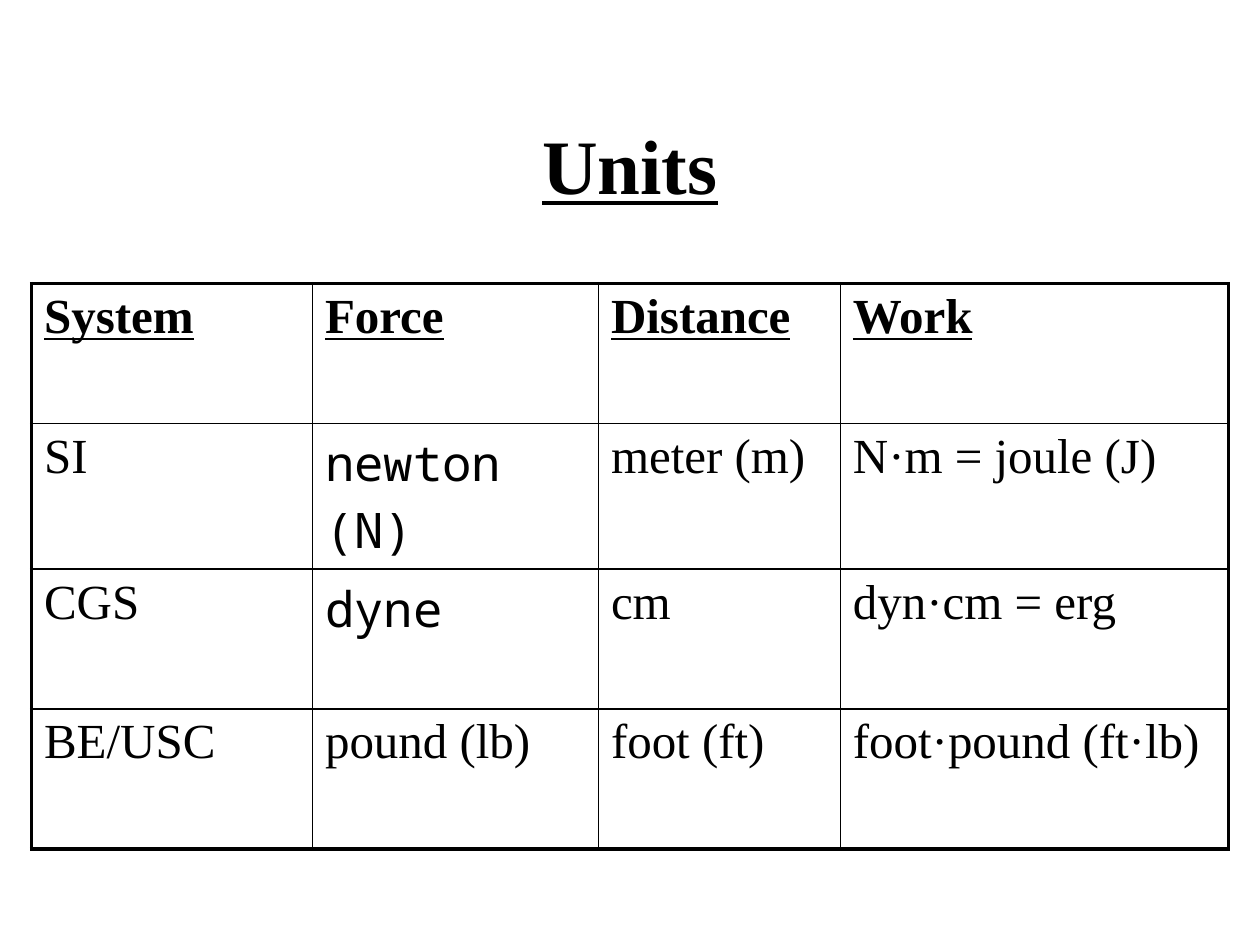
"""Build a slide with a table of units of force, distance and work."""
import pptx
import pptx.util
import pptx.dml.color
import pptx.enum.text
import pptx.oxml
import pptx.oxml.ns

WIDE, HIGH = 10, 7.5
INK = {"text": "000000", "line": "000000"}
SERIF, MONO = "Times New Roman", "Noto Sans Mono"
COLS = [2.23, 2.27, 1.92, 3.08]
ROW = 1.11
ROWS = [
    ["System", "Force", "Distance", "Work"],
    ["SI", "newton (N)", "meter (m)", "N·m = joule (J)"],
    ["CGS", "dyne", "cm", "dyn·cm = erg"],
    ["BE/USC", "pound (lb)", "foot (ft)", "foot·pound (ft·lb)"],
]
MONO_TEXT = {"newton (N)", "dyne"}


def inch(size):
    """Turn inches into a length."""
    return pptx.util.Inches(size)


def put(frame, text, size=28, font=SERIF, strong=False, align=None):
    """Write one formatted paragraph and return it."""
    para = frame.paragraphs[0]
    para.alignment = align
    run = para.add_run()
    run.text = text
    run.font.size = pptx.util.Pt(size)
    run.font.name = font
    run.font.bold = run.font.underline = strong
    run.font.color.rgb = pptx.dml.color.RGBColor.from_string(INK["text"])
    return para


def space(para, share):
    """Set the space before a paragraph as a share of its line."""
    tag = pptx.oxml.ns.nsdecls("a")
    xml = f'<a:spcBef {tag}><a:spcPct val="{int(share * 100000)}"/></a:spcBef>'
    para._p.get_or_add_pPr().insert(0, pptx.oxml.parse_xml(xml))


def edge(cell, side, width):
    """Draw one border of a cell."""
    tag = pptx.oxml.ns.nsdecls("a")
    xml = (f'<a:ln{side} {tag} w="{pptx.util.Pt(width)}"><a:solidFill>'
           f'<a:srgbClr val="{INK["line"]}"/></a:solidFill></a:ln{side}>')
    cell._tc.get_or_add_tcPr().append(pptx.oxml.parse_xml(xml))


def head(slide):
    """Place and format the title."""
    title = slide.shapes.title
    title.left, title.top = inch(0.075 * WIDE), inch(0.09 * HIGH)
    title.width, title.height = inch(0.85 * WIDE), inch(HIGH / 6)
    title.text_frame.vertical_anchor = pptx.enum.text.MSO_ANCHOR.MIDDLE
    put(title.text_frame, "Units", size=44, strong=True,
        align=pptx.enum.text.PP_ALIGN.CENTER)


def grid(slide):
    """Add the table with a thick frame and thin inner lines."""
    last, end = len(ROWS) - 1, len(COLS) - 1
    table = slide.shapes.add_table(
        len(ROWS), len(COLS), inch(0.025 * WIDE), inch(0.3 * HIGH),
        inch(sum(COLS)), inch(ROW * len(ROWS))).table
    table.first_row = table.horz_banding = False
    for col, width in zip(table.columns, COLS):
        col.width = inch(width)
    for r, texts in enumerate(ROWS):
        table.rows[r].height = inch(ROW)
        for c, text in enumerate(texts):
            cell = table.cell(r, c)
            font = MONO if text in MONO_TEXT else SERIF
            space(put(cell.text_frame, text, font=font, strong=r == 0), 0.2)
            outer = {"L": c == 0, "R": c == end, "T": r == 0, "B": r == last}
            for side, thick in outer.items():
                edge(cell, side, 2.25 if thick else 1)
            cell.fill.background()


def main():
    """Build and save the slide."""
    deck = pptx.Presentation()
    deck.slide_width, deck.slide_height = inch(WIDE), inch(HIGH)
    slide = deck.slides.add_slide(deck.slide_layouts[5])
    head(slide)
    grid(slide)
    deck.save("out.pptx")


main()
